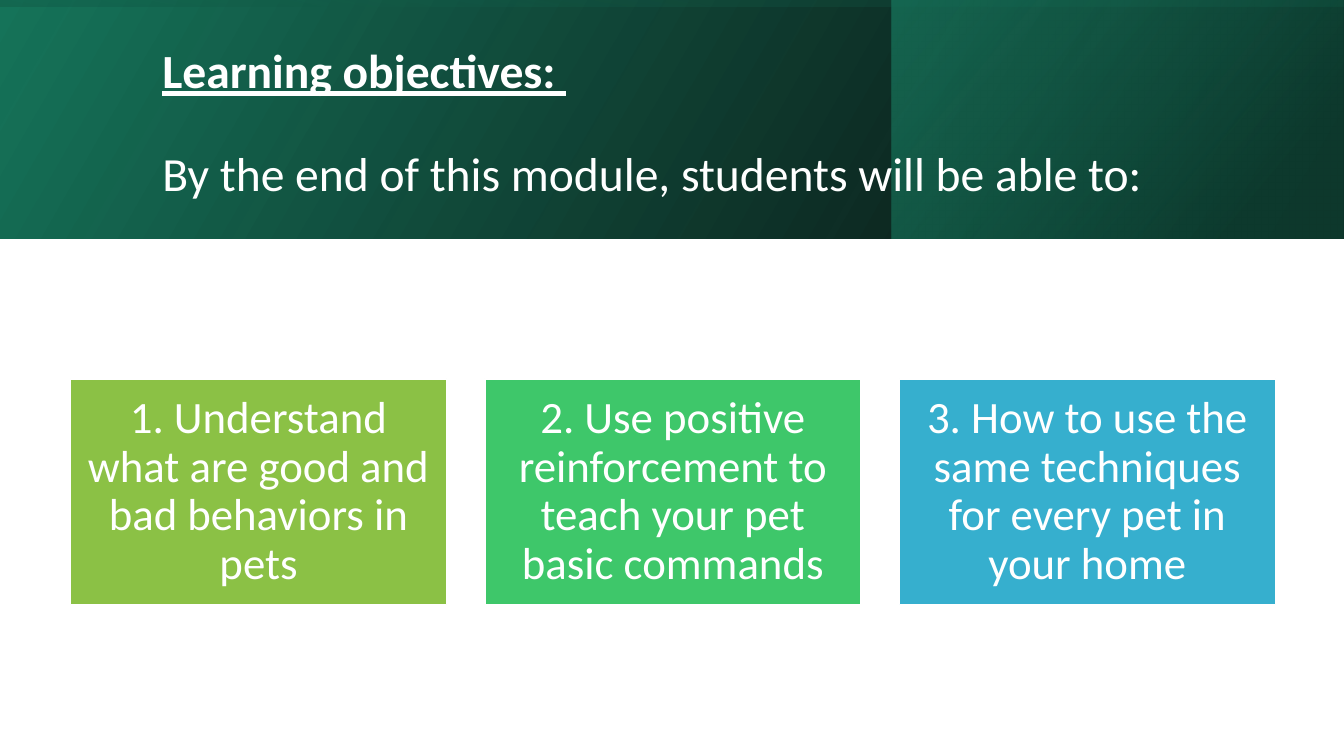
"""Build the learning objectives slide with a gradient header and three cards."""
import dataclasses
import typing

import lxml.etree
import pptx
import pptx.dml.color
import pptx.enum.shapes
import pptx.enum.text
import pptx.oxml.ns
import pptx.util

Inches = pptx.util.Inches
RECTANGLE = pptx.enum.shapes.MSO_SHAPE.RECTANGLE
ALIGN = pptx.enum.text.PP_ALIGN
MIDDLE = pptx.enum.text.MSO_ANCHOR.MIDDLE


@dataclasses.dataclass(frozen=True)
class Theme:
    font: str = "Calibri"
    white: str = "FFFFFF"
    title_size: float = 34
    card_size: float = 32
    line_spacing: float = 0.9
    title_gap: float = 37


class Stop(typing.NamedTuple):
    position: float
    color: str
    opacity: int


class Band(typing.NamedTuple):
    left: float
    top: float
    width: float
    height: float
    rotation: float
    angle: float
    stops: tuple[Stop, Stop]


class Card(typing.NamedTuple):
    text: str
    color: str


THEME = Theme()
SLIDE_WIDTH, SLIDE_HEIGHT, HEADER_HEIGHT = 13.33, 7.5, 2.37
STRIP_LEFT = (SLIDE_WIDTH - HEADER_HEIGHT) / 2
CARD_LEFT, CARD_TOP, CARD_WIDTH, CARD_HEIGHT = 0.7, 3.76, 3.73, 2.24
CARD_PITCH, CARD_INSET = 4.11, 0.13

BANDS = (
    Band(0, 0, SLIDE_WIDTH, HEADER_HEIGHT, 0, 330,
         (Stop(0, "000000", 96), Stop(1, "16745A", 100))),
    Band(8.84, 0, 4.48, HEADER_HEIGHT, 0, 320,
         (Stop(0.19, "0E4D3C", 68), Stop(1, "1D9A78", 48))),
    Band(STRIP_LEFT, -STRIP_LEFT, HEADER_HEIGHT, SLIDE_WIDTH, 270, 350,
         (Stop(0.23, "16745A", 16), Stop(0.99, "000000", 45))),
)
CARDS = (
    Card("1. Understand what are good and bad behaviors in pets", "8BC145"),
    Card("2. Use positive reinforcement to teach your pet basic commands", "3EC76A"),
    Card("3. How to use the same techniques for every pet in your home", "36AFCE"),
)


def rgb(color: str) -> pptx.dml.color.RGBColor:
    """Return the colour object for a hex string."""
    return pptx.dml.color.RGBColor.from_string(color)


def write_text(paragraph, text: str, *, size: float, align=ALIGN.LEFT,
               bold: bool = False, underline: bool = False, before: float = 0) -> None:
    """Write one formatted run into a paragraph."""
    paragraph.alignment = align
    paragraph.line_spacing = THEME.line_spacing
    paragraph.space_before = pptx.util.Pt(before)
    run = paragraph.add_run()
    run.text = text
    run.font.name = THEME.font
    run.font.size = pptx.util.Pt(size)
    run.font.bold = bold
    run.font.underline = underline
    run.font.color.rgb = rgb(THEME.white)


def add_rectangle(slide, left: float, top: float, width: float, height: float):
    """Add a rectangle without shadow."""
    shape = slide.shapes.add_shape(
        RECTANGLE, Inches(left), Inches(top), Inches(width), Inches(height))
    shape.shadow.inherit = False
    return shape


def add_band(slide, band: Band) -> None:
    """Add a mirrored band with a translucent gradient."""
    shape = add_rectangle(slide, band.left, band.top, band.width, band.height)
    shape.rotation = band.rotation
    shape.line.fill.background()
    shape.fill.gradient()
    shape.fill.gradient_angle = 360 - band.angle
    for gradient_stop, stop in zip(shape.fill.gradient_stops, band.stops):
        gradient_stop.position = stop.position
        gradient_stop.color.rgb = rgb(stop.color)
    qualify = pptx.oxml.ns.qn
    properties = shape.element.spPr
    properties.find(qualify("a:xfrm")).set("flipH", "1")
    for color, stop in zip(properties.iter(qualify("a:srgbClr")), band.stops):
        alpha = lxml.etree.SubElement(color, qualify("a:alpha"))
        alpha.set("val", str(stop.opacity * 1000))


def format_title(slide) -> None:
    """Place the title in front of the header and fill it."""
    title = slide.shapes.title
    title.element.getparent().append(title.element)
    title.left, title.top = Inches(1.51), Inches(0.38)
    title.width, title.height = Inches(10.63), Inches(1.72)
    frame = title.text_frame
    frame.word_wrap = True
    frame.auto_size = pptx.enum.text.MSO_AUTO_SIZE.NONE
    frame.vertical_anchor = MIDDLE
    write_text(frame.paragraphs[0], "Learning objectives: ",
               size=THEME.title_size, bold=True, underline=True)
    write_text(frame.add_paragraph(), "By the end of this module, students will be able to:",
               size=THEME.title_size, before=THEME.title_gap)


def add_card(slide, index: int, card: Card) -> None:
    """Add one objective card in its column."""
    shape = add_rectangle(
        slide, CARD_LEFT + index * CARD_PITCH, CARD_TOP, CARD_WIDTH, CARD_HEIGHT)
    shape.fill.solid()
    shape.fill.fore_color.rgb = rgb(card.color)
    shape.line.color.rgb = rgb(THEME.white)
    shape.line.width = pptx.util.Pt(1)
    frame = shape.text_frame
    frame.word_wrap = True
    frame.vertical_anchor = MIDDLE
    frame.margin_left = frame.margin_right = Inches(CARD_INSET)
    frame.margin_top = frame.margin_bottom = Inches(CARD_INSET)
    write_text(frame.paragraphs[0], card.text, size=THEME.card_size, align=ALIGN.CENTER)


def main() -> None:
    """Build and save the presentation."""
    presentation = pptx.Presentation()
    presentation.slide_width = Inches(SLIDE_WIDTH)
    presentation.slide_height = Inches(SLIDE_HEIGHT)
    slide = presentation.slides.add_slide(presentation.slide_layouts[5])
    for band in BANDS:
        add_band(slide, band)
    format_title(slide)
    for index, card in enumerate(CARDS):
        add_card(slide, index, card)
    presentation.save("out.pptx")


if __name__ == "__main__":
    main()
